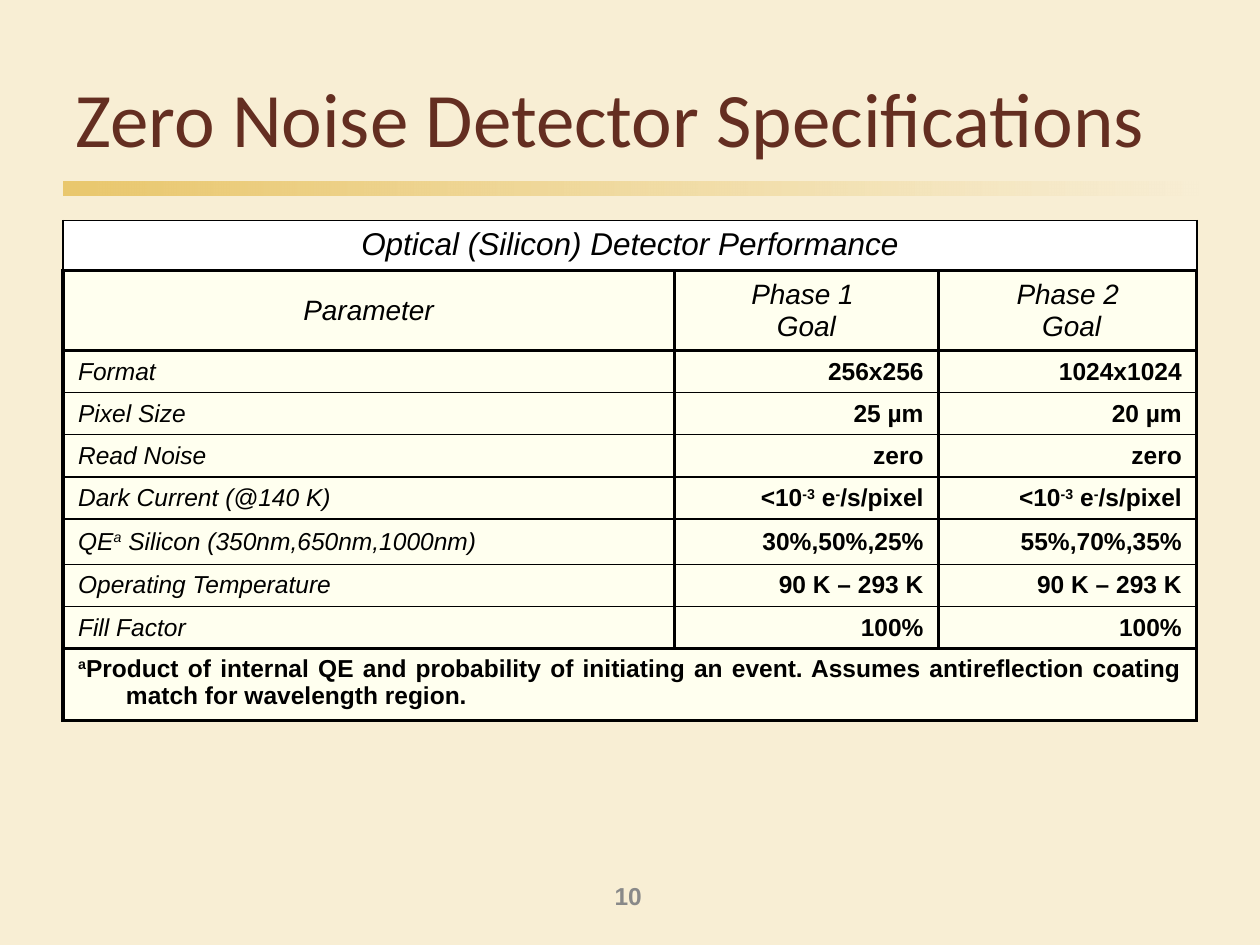
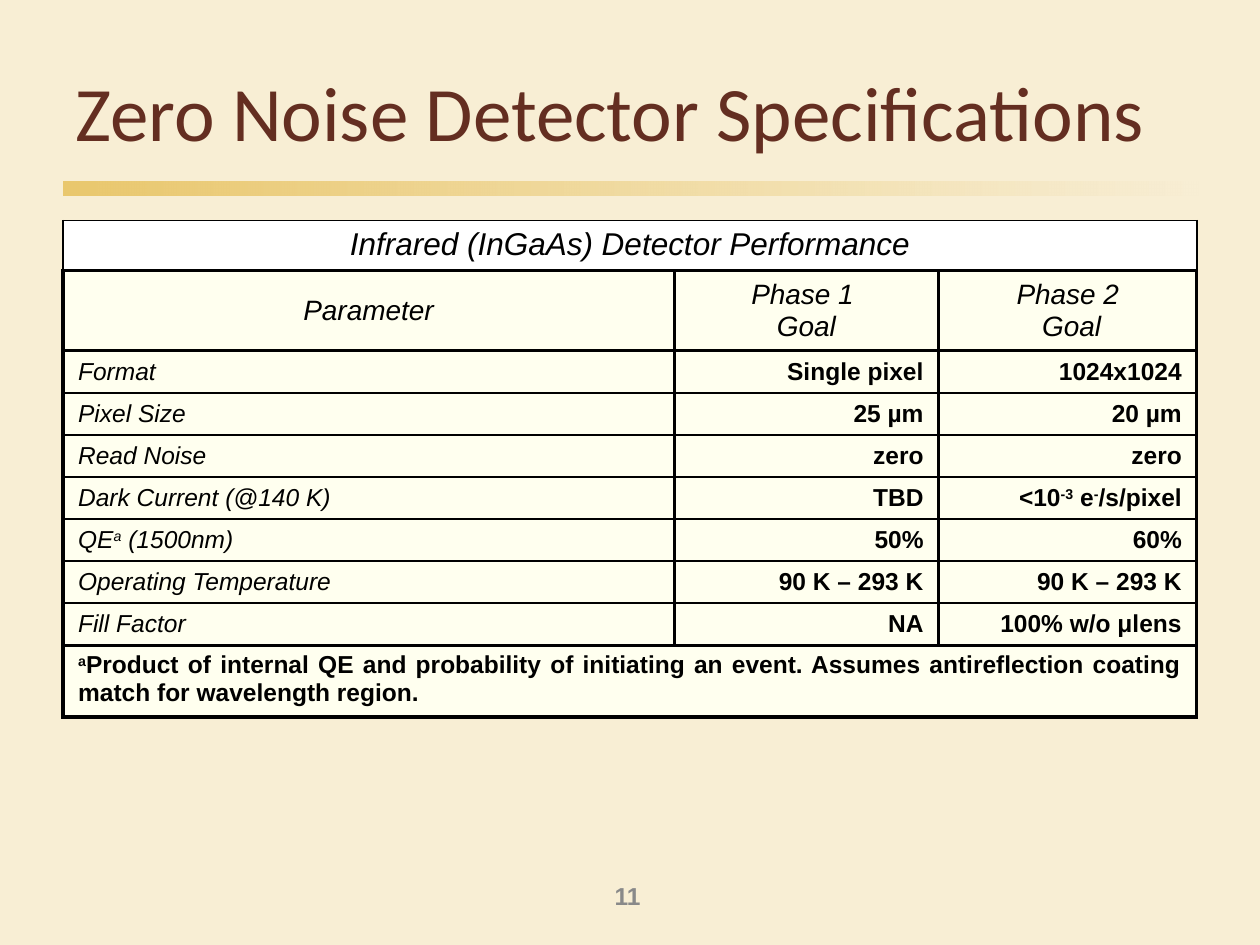
from dataclasses import dataclass

from lxml import etree
from pptx import Presentation
from pptx.dml.color import RGBColor
from pptx.enum.shapes import MSO_SHAPE
from pptx.enum.text import MSO_ANCHOR, MSO_AUTO_SIZE, PP_ALIGN
from pptx.oxml.ns import qn
from pptx.util import Inches, Pt

RECT = MSO_SHAPE.RECTANGLE
TOP, MIDDLE = MSO_ANCHOR.TOP, MSO_ANCHOR.MIDDLE
LEFT, CENTER, RIGHT, JUSTIFY = (
    PP_ALIGN.LEFT, PP_ALIGN.CENTER, PP_ALIGN.RIGHT, PP_ALIGN.JUSTIFY)
NO_FIT, FIT_SHAPE = MSO_AUTO_SIZE.NONE, MSO_AUTO_SIZE.SHAPE_TO_FIT_TEXT


@dataclass(frozen=True)
class Theme:
    background: str = "F8EED4"
    gold: str = "E5BB4C"
    title: str = "642E21"
    number: str = "898989"
    ink: str = "000000"
    white: str = "FFFFFF"
    cream: str = "FFFFEF"
    title_font: str = "Calibri"
    body_font: str = "Arial"
    title_size: int = 44
    caption_size: int = 18
    header_size: int = 16
    body_size: int = 14
    heavy: float = 2
    light: float = 1
    hanging: float = 0.38


THEME = Theme()
TITLE = {"name": THEME.title_font, "size": THEME.title_size, "color": THEME.title}
BODY = {"name": THEME.body_font, "size": THEME.body_size, "color": THEME.ink}
NUMBER = {**BODY, "color": THEME.number, "bold": True}
CAPTION = {**BODY, "size": THEME.caption_size, "italic": True}
HEADER = {**BODY, "size": THEME.header_size, "italic": True}
LABEL = {**BODY, "italic": True}
VALUE = {**BODY, "bold": True}

TITLE_TEXT = "Zero Noise Detector Specifications"
FOOTNOTE = ("|a|Product of internal QE and probability of initiating an event. "
            "Assumes antireflection coating match for wavelength region.")
HEADERS = ["Parameter", "Phase 1 \nGoal", "Phase 2\n Goal"]
DARK_RATE = "<10|-3| e|-|/s/pixel"
TEMPERATURE = ["Operating Temperature", "90 K – 293 K", "90 K – 293 K"]
COLUMNS = [4.85, 2.1, 2.05]

DETECTORS = [
    {
        "number": 10, "title_top": 0.3, "rule": 0.75, "hanging": THEME.hanging,
        "qe_height": 0.36,
        "caption": "Optical (Silicon) Detector Performance",
        "rows": [
            ["Format", "256x256", "1024x1024"],
            ["Pixel Size", "25 µm", "20 µm"],
            ["Read Noise", "zero", "zero"],
            ["Dark Current (@140 K)", DARK_RATE, DARK_RATE],
            ["QE|a| Silicon (350nm,650nm,1000nm)", "30%,50%,25%", "55%,70%,35%"],
            TEMPERATURE,
            ["Fill Factor", "100%", "100%"],
        ],
    },
    {
        "number": 11, "title_top": 0.25, "rule": 1.25, "hanging": 0,
        "qe_height": 0.33,
        "caption": "Infrared (InGaAs) Detector Performance",
        "rows": [
            ["Format", "Single pixel", "1024x1024"],
            ["Pixel Size", "25 µm", "20 µm"],
            ["Read Noise", "zero", "zero"],
            ["Dark Current (@140 K)", "TBD", DARK_RATE],
            ["QE|a| (1500nm)", "50%", "60%"],
            TEMPERATURE,
            ["Fill Factor", "NA", "100% w/o μlens"],
        ],
    },
]


def rgb(value):
    return RGBColor.from_string(value)


def add_run(p, text, style):
    r = p.add_run()
    r.text = text
    for key, value in style.items():
        if key == "color":
            r.font.color.rgb = rgb(value)
        else:
            setattr(r.font, key, Pt(value) if key == "size" else value)
    return r


def add_marked_runs(p, text, style):
    for i, part in enumerate(text.split("|")):
        if part:
            r = add_run(p, part, style)
            if i % 2:
                r.font._rPr.set("baseline", "30000")


def add_text(slide, box, text, style, wrap=False, anchor=TOP):
    s = slide.shapes.add_textbox(*map(Inches, box))
    tf = s.text_frame
    tf.word_wrap = wrap
    tf.auto_size = NO_FIT if wrap else FIT_SHAPE
    tf.vertical_anchor = anchor
    add_run(tf.paragraphs[0], text, style)


def add_gold_bar(slide, box):
    sp = slide.shapes.add_shape(RECT, *map(Inches, box))
    sp.shadow.inherit = False
    sp.line.fill.background()
    sp.fill.gradient()
    sp.fill.gradient_angle = 0
    stops = [(0, THEME.gold, 75), (1, THEME.background, 73)]
    for stop, (position, color, opacity) in zip(sp.fill.gradient_stops, stops):
        stop.position = position
        stop.color.rgb = rgb(color)
        clr = stop._gs.find(qn("a:srgbClr"))
        etree.SubElement(clr, qn("a:alpha"), val=str(opacity * 1000))


def add_frame(slide, number, title_top):
    slide.background.fill.solid()
    slide.background.fill.fore_color.rgb = rgb(THEME.background)
    add_gold_bar(slide, (0.5, 1.44, 9.01, 0.11))
    add_text(slide, (4.78, 6.94, 0.44, 0.33), str(number), NUMBER)
    add_text(slide, (0.5, title_top, 9, 1.25), TITLE_TEXT, TITLE, True, MIDDLE)


def set_borders(cell, sides, top, bottom):
    tc_pr = cell._tc.get_or_add_tcPr()
    for i, (side, width) in enumerate(zip("LRTB", (sides, sides, top, bottom))):
        ln = etree.Element(qn(f"a:ln{side}"), w=str(Pt(width)))
        fill = etree.SubElement(ln, qn("a:solidFill"))
        etree.SubElement(fill, qn("a:srgbClr"), val=THEME.ink)
        tc_pr.insert(i, ln)


def fill_cell(cell, text, style, align, hanging=THEME.hanging):
    tf = cell.text_frame
    for i, line in enumerate(text.split("\n")):
        p = tf.add_paragraph() if i else tf.paragraphs[0]
        p.alignment = align
        p_pr = p._p.get_or_add_pPr()
        p_pr.set("marL", str(Inches(hanging)))
        p_pr.set("indent", str(-Inches(hanging)))
        add_marked_runs(p, line, style)


def format_row(cells, color, anchor, sides, top, bottom):
    margins = {"margin_left": 0.12, "margin_right": 0.12,
               "margin_top": 0.05, "margin_bottom": 0.05}
    for cell in cells:
        for key, value in margins.items():
            setattr(cell, key, Inches(value))
        cell.vertical_anchor = anchor
        cell.fill.solid()
        cell.fill.fore_color.rgb = rgb(color)
        set_borders(cell, sides, top, bottom)


def add_spec_table(slide, left, top, detector):
    rows = detector["rows"]
    heights = [0.4, 0.63] + [
        detector["qe_height"] if row[0].startswith("QE") else 0.33 for row in rows
    ] + [0.57]
    last = len(heights) - 1
    box = map(Inches, (left, top, sum(COLUMNS), sum(heights)))
    table = slide.shapes.add_table(len(heights), len(COLUMNS), *box).table
    table.first_row = table.horz_banding = False
    for column, width in zip(table.columns, COLUMNS):
        column.width = Inches(width)

    heavy, rule = THEME.heavy, detector["rule"]
    edges = [THEME.light, heavy, heavy] + [rule] * (len(rows) - 1) + [heavy, heavy]
    for i, height in enumerate(heights):
        table.rows[i].height = Inches(height)
        format_row(table.rows[i].cells,
                   THEME.cream if i else THEME.white,
                   MIDDLE if 0 < i < last else TOP,
                   heavy if i else THEME.light, edges[i], edges[i + 1])
    for i in (0, last):
        table.cell(i, 0).merge(table.cell(i, len(COLUMNS) - 1))

    fill_cell(table.cell(0, 0), detector["caption"], CAPTION, CENTER)
    for j, text in enumerate(HEADERS):
        fill_cell(table.cell(1, j), text, HEADER, CENTER)
    for i, row in enumerate(rows, 2):
        for j, text in enumerate(row):
            fill_cell(table.cell(i, j), text, VALUE if j else LABEL,
                      RIGHT if j else LEFT)
    fill_cell(table.cell(last, 0), FOOTNOTE, VALUE, JUSTIFY, detector["hanging"])


def main():
    prs = Presentation()
    prs.slide_width, prs.slide_height = Inches(10), Inches(7.5)
    for detector in DETECTORS:
        slide = prs.slides.add_slide(prs.slide_layouts[6])
        add_frame(slide, detector["number"], detector["title_top"])
        add_spec_table(slide, 0.5, 1.75, detector)
    prs.save("out.pptx")


if __name__ == "__main__":
    main()
